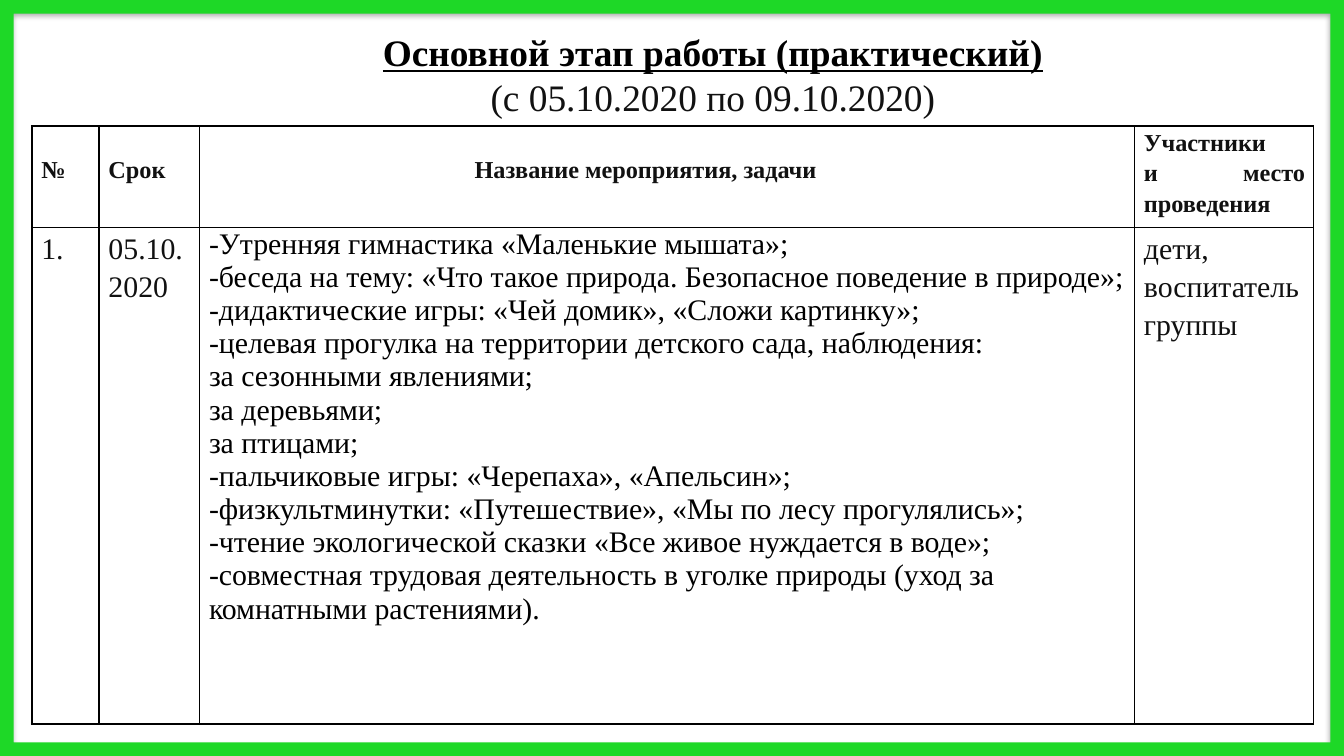
from lxml.etree import SubElement
from pptx import Presentation
from pptx.dml.color import RGBColor
from pptx.enum.shapes import MSO_SHAPE
from pptx.enum.text import MSO_ANCHOR, PP_ALIGN
from pptx.oxml import parse_xml
from pptx.oxml.ns import nsdecls, qn
from pptx.util import Cm, Pt

COLORS = {"frame": "1ED827", "black": "000000", "ink": "111111", "paper": "FFFFFF"}
FONT = "Times New Roman"
COLUMN_WIDTHS = [1.27, 1.9, 17.67, 3.38]
ROW_HEIGHTS = [1.92, 9.39]
LEFT_MARGIN = 0.18
RIGHT_MARGIN = 0.16
HEADER_DROP = 0.51
HEADER_INDENT = 5.2

HEADERS = [
    (["№"], LEFT_MARGIN, HEADER_DROP),
    (["Срок"], LEFT_MARGIN, HEADER_DROP),
    (["Название мероприятия, задачи"], HEADER_INDENT, HEADER_DROP),
    (["Участники", "и место проведения"], LEFT_MARGIN, 0),
]
ACTIVITIES = [
    "-Утренняя гимнастика «Маленькие мышата»;",
    "-беседа на тему: «Что такое природа. Безопасное поведение в природе»;",
    "-дидактические игры: «Чей домик», «Сложи картинку»;",
    "-целевая прогулка на территории детского сада, наблюдения:\n"
    "за сезонными явлениями;\nза деревьями;\nза птицами;",
    "-пальчиковые игры: «Черепаха», «Апельсин»;",
    "-физкультминутки: «Путешествие», «Мы по лесу прогулялись»;",
    "-чтение экологической сказки «Все живое нуждается в воде»;",
    "-совместная трудовая деятельность в уголке природы (уход за комнатными растениями).",
]


def color(name):
    """Return a named colour."""
    return RGBColor.from_string(COLORS[name])


def add_span(para, text, size, ink, bold=False, underline=False):
    """Add one formatted run to a paragraph."""
    span = para.add_run()
    span.text = text
    font = span.font
    font.name, font.size = FONT, Pt(size)
    font.bold, font.underline = bold, underline
    font.color.rgb = color(ink)


def fill_paragraphs(frame, texts, size, ink, bold=False, align=None, spacing=None):
    """Write each text as a paragraph, breaking lines at newlines."""
    for index, text in enumerate(texts):
        para = frame.add_paragraph() if index else frame.paragraphs[0]
        para.alignment, para.line_spacing = align, spacing
        for number, line in enumerate(text.split("\n")):
            if number:
                para.add_line_break()
            add_span(para, line, size, ink, bold)


def style_cell(cell, left=LEFT_MARGIN, top=0):
    """Set the margins, borders and fill of a table cell."""
    cell.margin_left, cell.margin_right = Cm(left), Cm(RIGHT_MARGIN)
    cell.margin_top, cell.margin_bottom = Cm(top), 0
    properties = cell._tc.get_or_add_tcPr()
    for side in ("a:lnL", "a:lnR", "a:lnT", "a:lnB"):
        border = SubElement(properties, qn(side), w=str(Pt(1)))
        fill = SubElement(border, qn("a:solidFill"))
        SubElement(fill, qn("a:srgbClr"), val=COLORS["black"])
    cell.fill.background()


def add_frame(page, width, height):
    """Draw the green border with its soft shadow."""
    frame = page.shapes.add_shape(MSO_SHAPE.FRAME, 0, 0, width, height)
    frame.adjustments[0] = 0.018
    frame.fill.solid()
    frame.fill.fore_color.rgb = color("frame")
    frame.line.fill.background()
    frame.shadow.inherit = False
    effects = frame._element.spPr.find(qn("a:effectLst"))
    effects.append(parse_xml(
        f'<a:outerShdw {nsdecls("a")} blurRad="{Pt(3.1)}" dist="{Pt(1.8)}" '
        f'dir="5400000" rotWithShape="0"><a:srgbClr val="{COLORS["black"]}">'
        '<a:alpha val="35000"/></a:srgbClr></a:outerShdw>'))


def add_plan(page):
    """Build the table of activities."""
    table = page.shapes.add_table(
        len(ROW_HEIGHTS), len(COLUMN_WIDTHS), Cm(0.6), Cm(2.38),
        Cm(sum(COLUMN_WIDTHS)), Cm(sum(ROW_HEIGHTS))).table
    table.first_row = table.horz_banding = False
    for column, width in zip(table.columns, COLUMN_WIDTHS):
        column.width = Cm(width)
    for row, height in zip(table.rows, ROW_HEIGHTS):
        row.height = Cm(height)
    justified = {"align": PP_ALIGN.JUSTIFY, "spacing": 1.15}
    for index, (texts, left, top) in enumerate(HEADERS):
        cell = table.cell(0, index)
        style_cell(cell, left, top)
        fill_paragraphs(cell.text_frame, texts, 13, "ink", True, **justified)
    details = [["1."], ["05.10.2020"], ACTIVITIES, ["дети, воспитатель группы"]]
    for index, texts in enumerate(details):
        cell = table.cell(1, index)
        style_cell(cell)
        if texts is ACTIVITIES:
            fill_paragraphs(cell.text_frame, texts, 16, "black")
        else:
            fill_paragraphs(cell.text_frame, texts, 16, "ink", **justified)


def add_title(page):
    """Add the heading and the dates under it."""
    box = page.shapes.add_textbox(Cm(6.77), Cm(0.41), Cm(13.41), Cm(2.74))
    frame = box.text_frame
    frame.word_wrap = True
    frame.vertical_anchor = MSO_ANCHOR.MIDDLE
    frame.margin_bottom = Cm(0.89)
    heading, dates = frame.paragraphs[0], frame.add_paragraph()
    for para in (heading, dates):
        para.alignment = PP_ALIGN.CENTER
    add_span(heading, "Основной этап работы (практический)", 20, "black", True, True)
    add_span(dates, "(с 05.10.2020 по 09.10.2020)", 20, "ink")


def main():
    """Build and save the slide."""
    deck = Presentation()
    deck.slide_width, deck.slide_height = Cm(25.4), Cm(14.29)
    page = deck.slides.add_slide(deck.slide_layouts[6])
    page.background.fill.solid()
    page.background.fill.fore_color.rgb = color("paper")
    add_frame(page, deck.slide_width, deck.slide_height)
    add_plan(page)
    add_title(page)
    deck.save("out.pptx")


if __name__ == "__main__":
    main()
